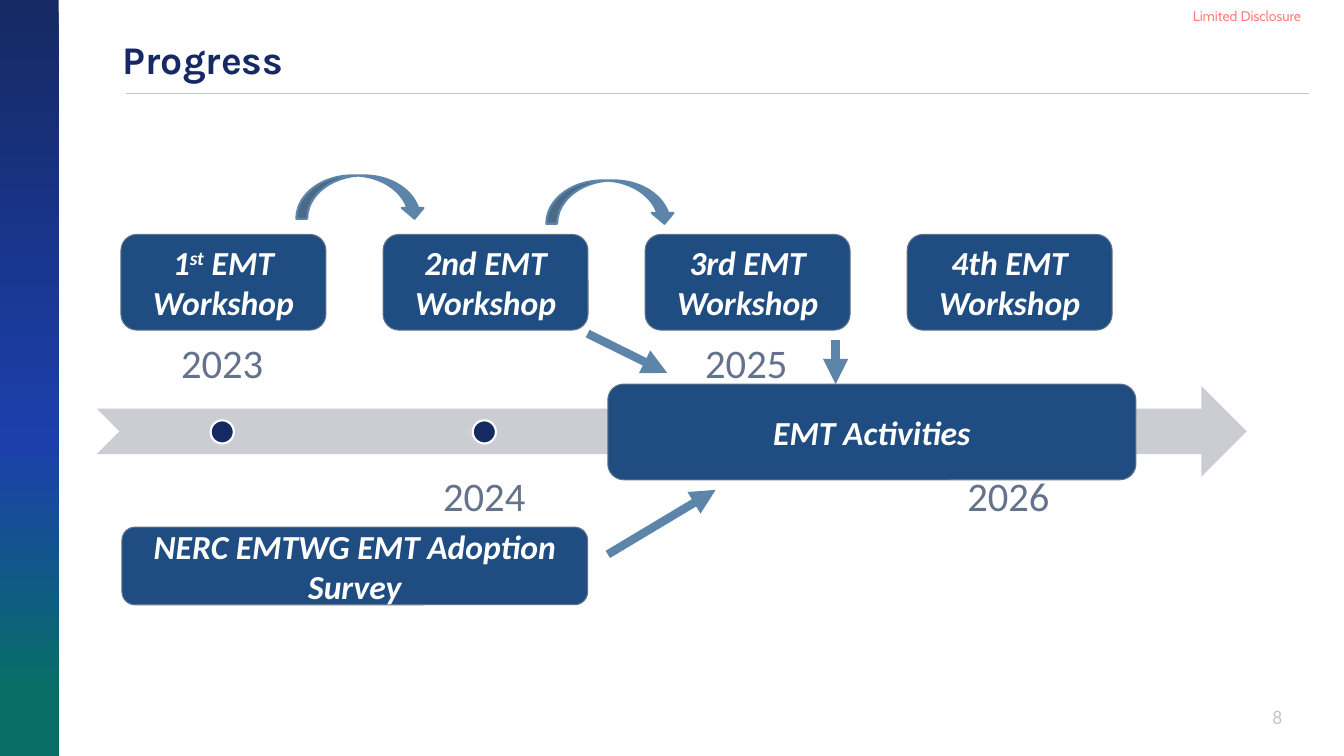
import copy
from dataclasses import dataclass

import pptx
import pptx.dml.color
import pptx.enum.shapes
import pptx.enum.text
import pptx.oxml.ns
import pptx.util

RGBColor = pptx.dml.color.RGBColor
Kind = pptx.enum.shapes.MSO_SHAPE
Link = pptx.enum.shapes.MSO_CONNECTOR
Align = pptx.enum.text.PP_ALIGN
Anchor = pptx.enum.text.MSO_ANCHOR
qn = pptx.oxml.ns.qn

NAVY = RGBColor(0x15, 0x29, 0x63)
TITLE = RGBColor(0x16, 0x29, 0x64)
ROYAL = RGBColor(0x1C, 0x3F, 0xAC)
TEAL = RGBColor(0x07, 0x6F, 0x66)
RED = RGBColor(0xFF, 0x00, 0x00)
RULE = RGBColor(0xC0, 0xC7, 0xD2)
SILVER = RGBColor(0xCC, 0xCD, 0xD3)
SLATE = RGBColor(0x64, 0x73, 0x8B)
BLUE = RGBColor(0x1F, 0x4C, 0x81)
STEEL = RGBColor(0x5D, 0x85, 0xA9)
WHITE = RGBColor(0xFF, 0xFF, 0xFF)

WIDE, HIGH = pptx.util.Inches(13.33), pptx.util.Inches(7.5)
COLS, ROWS = 80, 45
STEP = 15.6


@dataclass(frozen=True)
class Area:
    col: float
    row: float
    wide: float
    high: float

    def place(self) -> tuple[int, int, int, int]:
        return across(self.col), down(self.row), across(self.wide), down(self.high)


@dataclass(frozen=True)
class Box:
    area: Area
    words: tuple[str, ...]


@dataclass(frozen=True)
class Stroke:
    start: tuple[float, float]
    end: tuple[float, float]
    color: RGBColor = STEEL
    weight: float = 6
    head: bool = True


@dataclass(frozen=True)
class Style:
    font: dict
    line: dict
    frame: dict


def across(cols: float) -> int:
    return round(WIDE * cols / COLS)


def down(rows: float) -> int:
    return round(HIGH * rows / ROWS)


def apply(target, values: dict) -> None:
    for name, value in values.items():
        setattr(target, name, value)


def face(name: str, size: float, **more) -> dict:
    return {"name": name, "size": pptx.util.Pt(size), **more}


def margins(side: int, top: int) -> dict:
    return {"margin_left": side, "margin_right": side,
            "margin_top": top, "margin_bottom": top, "word_wrap": True}


NONE = margins(0, 0)
PLAIN = margins(pptx.util.Inches(0.1), pptx.util.Inches(0.05))
PADDED = margins(across(1.38), down(1.38))
MIDDLE = {"vertical_anchor": Anchor.MIDDLE}
CENTER = {"alignment": Align.CENTER}
TIGHT = {"line_spacing": 0.9}

LABEL = Style(face("Calibri", 24, bold=True, italic=True), CENTER, PLAIN | MIDDLE)
YEAR = Style(face("Calibri", 29), CENTER | TIGHT, PADDED)
HEADING = Style(face("Karla", 28, bold=True), TIGHT, PLAIN | MIDDLE)
NOTICE = Style(face("Cabin", 10), {}, NONE | {"word_wrap": False})
NUMBER = Style(face("Calibri", 14), {"alignment": Align.RIGHT}, PLAIN)


def write(shape, words: tuple[str, ...], style: Style, color: RGBColor) -> list:
    frame = shape.text_frame
    apply(frame, style.frame)
    line = frame.paragraphs[0]
    apply(line, style.line)
    runs = []
    for word in words:
        run = line.add_run()
        run.text = word
        apply(run.font, style.font)
        run.font.color.rgb = color
        runs.append(run)
    return runs


def add_text(slide, area: Area, text: str, style: Style, color: RGBColor) -> list:
    return write(slide.shapes.add_textbox(*area.place()), (text,), style, color)


def add_form(slide, kind, area: Area, fill: RGBColor, edge: RGBColor | None = None,
             weight: float = 0):
    shape = slide.shapes.add_shape(kind, *area.place())
    shape.shadow.inherit = False
    shape.fill.solid()
    shape.fill.fore_color.rgb = fill
    if edge is None:
        shape.line.fill.background()
    else:
        shape.line.color.rgb = edge
        shape.line.width = pptx.util.Pt(weight)
    return shape


def add_box(slide, box: Box) -> None:
    shape = add_form(slide, Kind.ROUNDED_RECTANGLE, box.area, BLUE, SLATE, 0.75)
    runs = write(shape, box.words, LABEL, WHITE)
    if len(runs) > 1:
        runs[1].font._element.set("baseline", "30000")


def add_stroke(slide, stroke: Stroke) -> None:
    (left, top), (right, base) = stroke.start, stroke.end
    line = slide.shapes.add_connector(
        Link.STRAIGHT, across(left), down(top), across(right), down(base))
    line.line.color.rgb = stroke.color
    line.line.width = pptx.util.Pt(stroke.weight)
    props = line._element.spPr
    if stroke.head:
        edge = props.find(qn("a:ln"))
        edge.append(edge.makeelement(qn("a:tailEnd"), {"type": "triangle"}))
    props.append(props.makeelement(qn("a:effectLst"), {}))


def add_frame(slide) -> None:
    band = add_form(slide, Kind.RECTANGLE, Area(0, 0, 3.5, ROWS), NAVY)
    band.fill.gradient()
    band.fill.gradient_angle = 270
    stops = band._element.spPr.find(qn("a:gradFill")).find(qn("a:gsLst"))
    stops.append(copy.deepcopy(stops[-1]))
    shades = ((0, NAVY), (0.58, ROYAL), (0.92, TEAL))
    for stop, (share, shade) in zip(band.fill.gradient_stops, shades):
        stop.position = share
        stop.color.rgb = shade

    notice = add_text(slide, Area(71, 0.42, 6.9, 1.02), "Limited Disclosure", NOTICE, RED)
    tint = notice[0].font._element.find(qn("a:solidFill"))[0]
    tint.append(tint.makeelement(qn("a:alpha"), {"val": "50000"}))
    for left, right in ((7.5, 77.88), (7.86, 77.94)):
        add_stroke(slide, Stroke((left, 5.58), (right, 5.58), RULE, 0.8, False))
    add_text(slide, Area(6.72, 1.8, 58.8, 3.78), "Progress", HEADING, TITLE)
    add_text(slide, Area(56.34, 41.64, 20.58, 1.68), "8", NUMBER, RULE)


def add_years(slide) -> None:
    add_form(slide, Kind.NOTCHED_RIGHT_ARROW, Area(5.76, 22.98, 68.46, 5.4), SILVER)
    sides = ((18.96, Anchor.BOTTOM), (27.06, Anchor.TOP))
    for spot in range(4):
        row, anchor = sides[spot % 2]
        style = Style(YEAR.font, YEAR.line, YEAR.frame | {"vertical_anchor": anchor})
        area = Area(5.82 + STEP * spot, row, 14.82, 5.4)
        add_text(slide, area, str(2023 + spot), style, SLATE)
    for spot in range(2):
        area = Area(12.54 + STEP * spot, 25.02, 1.38, 1.38)
        add_form(slide, Kind.OVAL, area, NAVY, WHITE, 1.5)


def main() -> None:
    deck = pptx.Presentation()
    deck.slide_width, deck.slide_height = WIDE, HIGH
    slide = deck.slides.add_slide(deck.slide_layouts[6])
    add_frame(slide)
    add_years(slide)

    events = (("1", "st", " EMT Workshop"), ("2nd EMT Workshop",),
              ("3rd EMT Workshop",), ("4th EMT Workshop",))
    boxes = [Box(Area(7.2 + STEP * spot, 13.95, 12.2, 5.7), words)
             for spot, words in enumerate(events)]
    boxes += [Box(Area(7.26, 31.38, 27.72, 4.62), ("NERC EMTWG EMT Adoption Survey",)),
              Box(Area(36.18, 22.86, 31.44, 5.7), ("EMT Activities",))]
    for box in boxes:
        add_box(slide, box)

    for col, row in ((17.64, 10.44), (32.52, 10.74)):
        add_form(slide, Kind.CURVED_DOWN_ARROW, Area(col, row, 7.68, 2.58), STEEL, STEEL, 1.5)
    for stroke in (Stroke((36.18, 33), (42.6, 29.16)),
                   Stroke((49.74, 20.22), (49.74, 22.86)),
                   Stroke((34.98, 19.86), (39.72, 22.2))):
        add_stroke(slide, stroke)
    deck.save("out.pptx")


if __name__ == "__main__":
    main()
